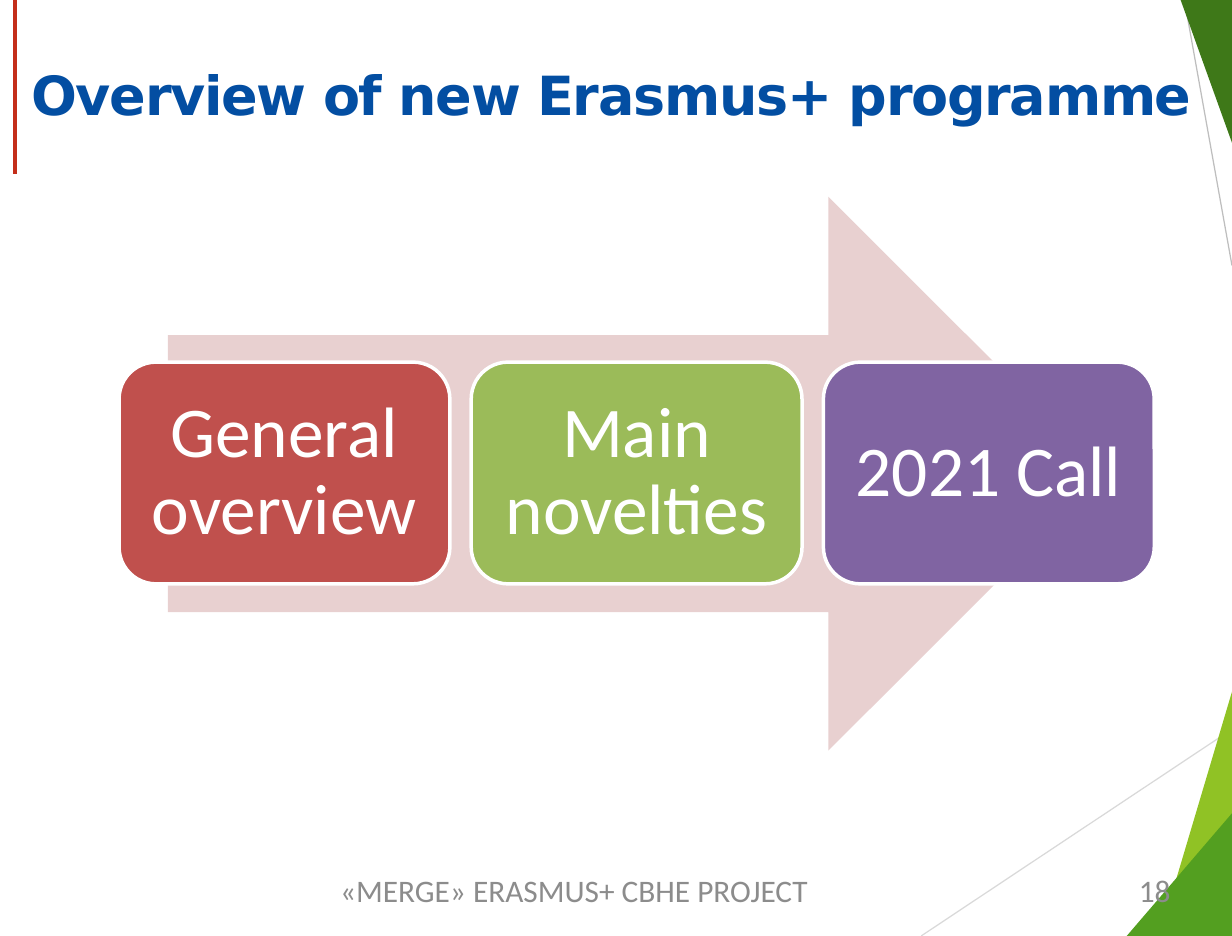
from lxml.etree import SubElement
from pptx import Presentation
from pptx.dml.color import RGBColor
from pptx.enum.shapes import MSO_CONNECTOR, MSO_SHAPE
from pptx.enum.text import MSO_ANCHOR, PP_ALIGN
from pptx.oxml.ns import qn
from pptx.util import Pt

EMU_PER_PX = 9144
PAGE_WIDTH, PAGE_HEIGHT = 983, 747
CARD_LEFT, CARD_TOP, CARD_WIDTH, CARD_HEIGHT, CARD_PITCH = 95, 289, 264, 177, 281
CARD_INSET = 17
GREY = "8C8C8C"

LINES = [
    ((945, 0), (983, 212), "BEBEBE", 0.72),
    ((983, 582), (735, 747), "D9D9D9", 0.72),
    ((12, 0), (12, 139), "C42E1A", 2.16),
]
TRIANGLES = [
    ([(983, 552), (925, 747), (983, 747)], "90C225"),
    ([(983, 649), (899, 747), (983, 747)], "539F20"),
    ([(942, 0), (983, 114), (983, 0)], "3E7818"),
]
CARDS = [
    ("General overview", "C0504D"),
    ("Main novelties", "9BBB59"),
    ("2021 Call", "8064A2"),
]


def px(*lengths):
    """Turn pixel lengths into a list of EMU lengths."""
    return [length * EMU_PER_PX for length in lengths]


def paint(color_format, color):
    """Apply a hex colour to a fill's or font's colour format."""
    color_format.rgb = RGBColor.from_string(color)


def fill_shape(shape, color):
    """Give a shape a plain fill without outline or shadow."""
    shape.shadow.inherit = False
    shape.fill.solid()
    paint(shape.fill.fore_color, color)
    shape.line.fill.background()


def write(shape, text, font, size, color, align, inset=0):
    """Write one formatted paragraph into a shape and return its paragraph."""
    frame = shape.text_frame
    frame.word_wrap = True
    (frame.margin_left, frame.margin_top,
     frame.margin_right, frame.margin_bottom) = px(*[inset] * 4)
    frame.text = text
    para = frame.paragraphs[0]
    para.alignment = align
    span = para.runs[0]
    span.font.name = font
    span.font.size = Pt(size)
    paint(span.font.color, color)
    return para


def add_line(page, start, end, color, width):
    """Draw a straight line without shadow."""
    line = page.shapes.add_connector(MSO_CONNECTOR.STRAIGHT, *px(*start, *end))
    paint(line.line.color, color)
    line.line.width = Pt(width)
    SubElement(line._element.spPr, qn("a:effectLst"))


def add_polygon(page, points, color):
    """Draw a closed filled polygon."""
    builder = page.shapes.build_freeform(*points[0], scale=EMU_PER_PX)
    builder.add_line_segments(points[1:], close=True)
    fill_shape(builder.convert_to_shape(), color)


def add_card(page, index, text, color):
    """Add one rounded step card at its place in the row."""
    left = CARD_LEFT + index * CARD_PITCH
    card = page.shapes.add_shape(
        MSO_SHAPE.ROUNDED_RECTANGLE, *px(left, CARD_TOP, CARD_WIDTH, CARD_HEIGHT))
    fill_shape(card, color)
    paint(card.line.color, "FFFFFF")
    card.line.width = Pt(2)
    para = write(card, text, "Calibri", 41, "FFFFFF", PP_ALIGN.CENTER, CARD_INSET)
    para.line_spacing = 0.9
    card.text_frame.vertical_anchor = MSO_ANCHOR.MIDDLE


def add_label(page, bounds, text, font, size, color, align):
    """Add a text box without margins and return its paragraph."""
    box = page.shapes.add_textbox(*px(*bounds))
    return write(box, text, font, size, color, align)


def main():
    """Build the slide and save the deck."""
    deck = Presentation()
    deck.slide_width, deck.slide_height = px(PAGE_WIDTH, PAGE_HEIGHT)
    page = deck.slides.add_slide(deck.slide_layouts[6])

    for line in LINES:
        add_line(page, *line)
    for points, color in TRIANGLES:
        add_polygon(page, points, color)

    arrow = page.shapes.add_shape(MSO_SHAPE.RIGHT_ARROW, *px(134, 157, 748, 442))
    fill_shape(arrow, "E8D0D0")
    for index, (text, color) in enumerate(CARDS):
        add_card(page, index, text, color)

    title = add_label(page, (25, 49, 950, 52), "Overview of new Erasmus+ programme",
                      "DejaVu Sans", 31, "034EA2", PP_ALIGN.LEFT)
    title.runs[0].font.bold = True
    title.runs[0].font._element.set("spc", "-70")
    add_label(page, (267, 695, 382, 37), "«MERGE» ERASMUS+ CBHE PROJECT",
              "Calibri", 18, GREY, PP_ALIGN.CENTER)
    add_label(page, (708, 695, 226, 37), "18", "Calibri", 18, GREY, PP_ALIGN.RIGHT)
    deck.save("out.pptx")


if __name__ == "__main__":
    main()
